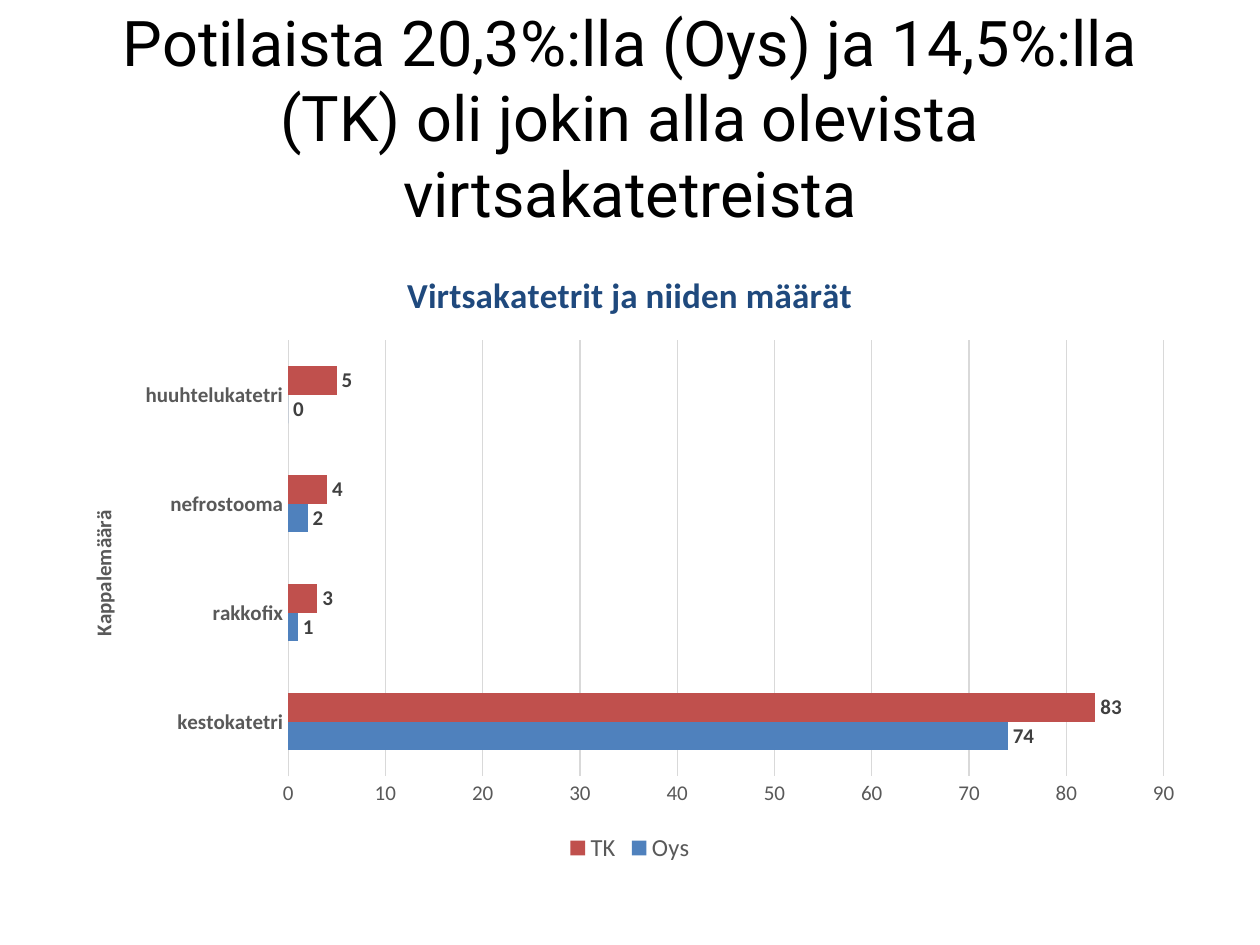
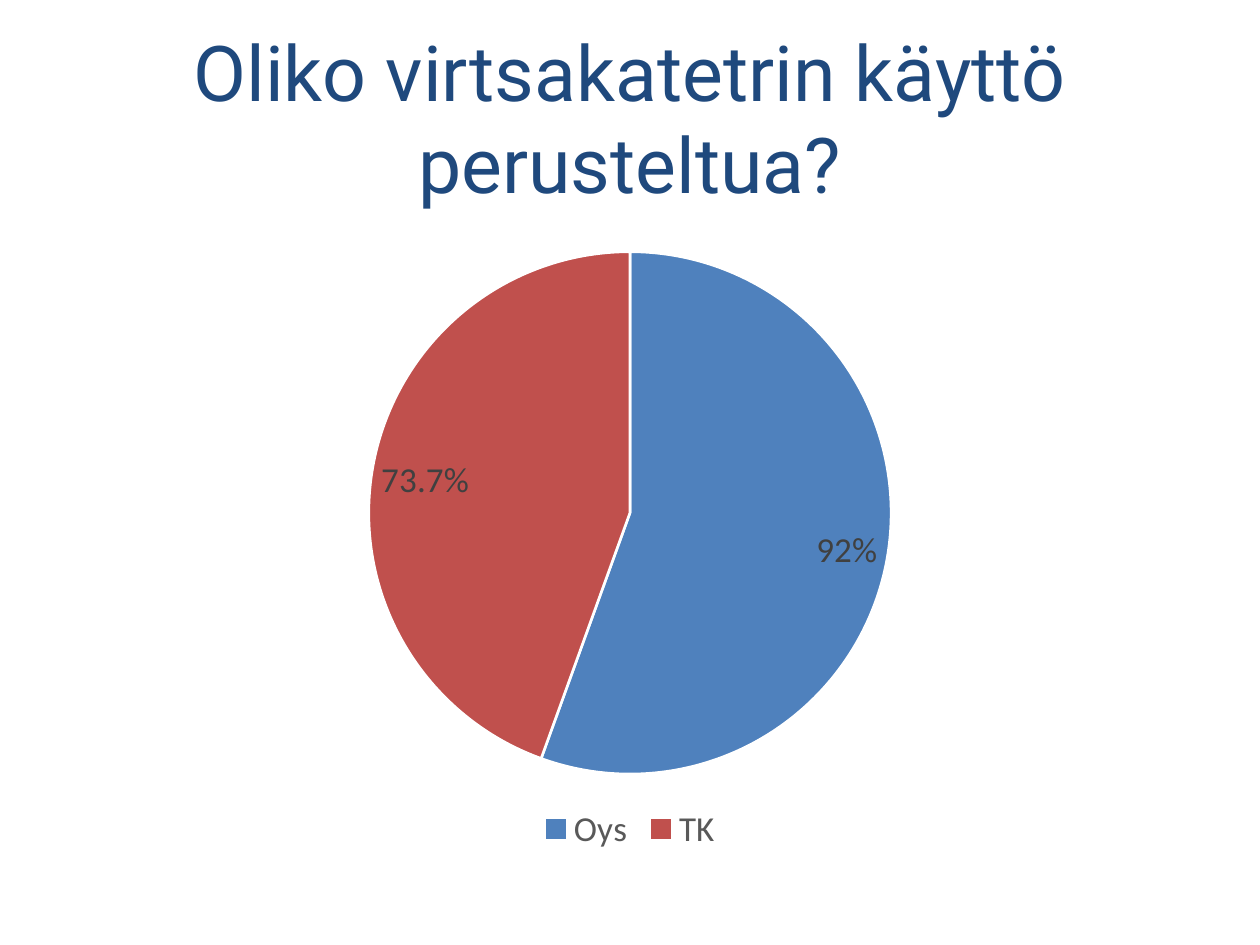
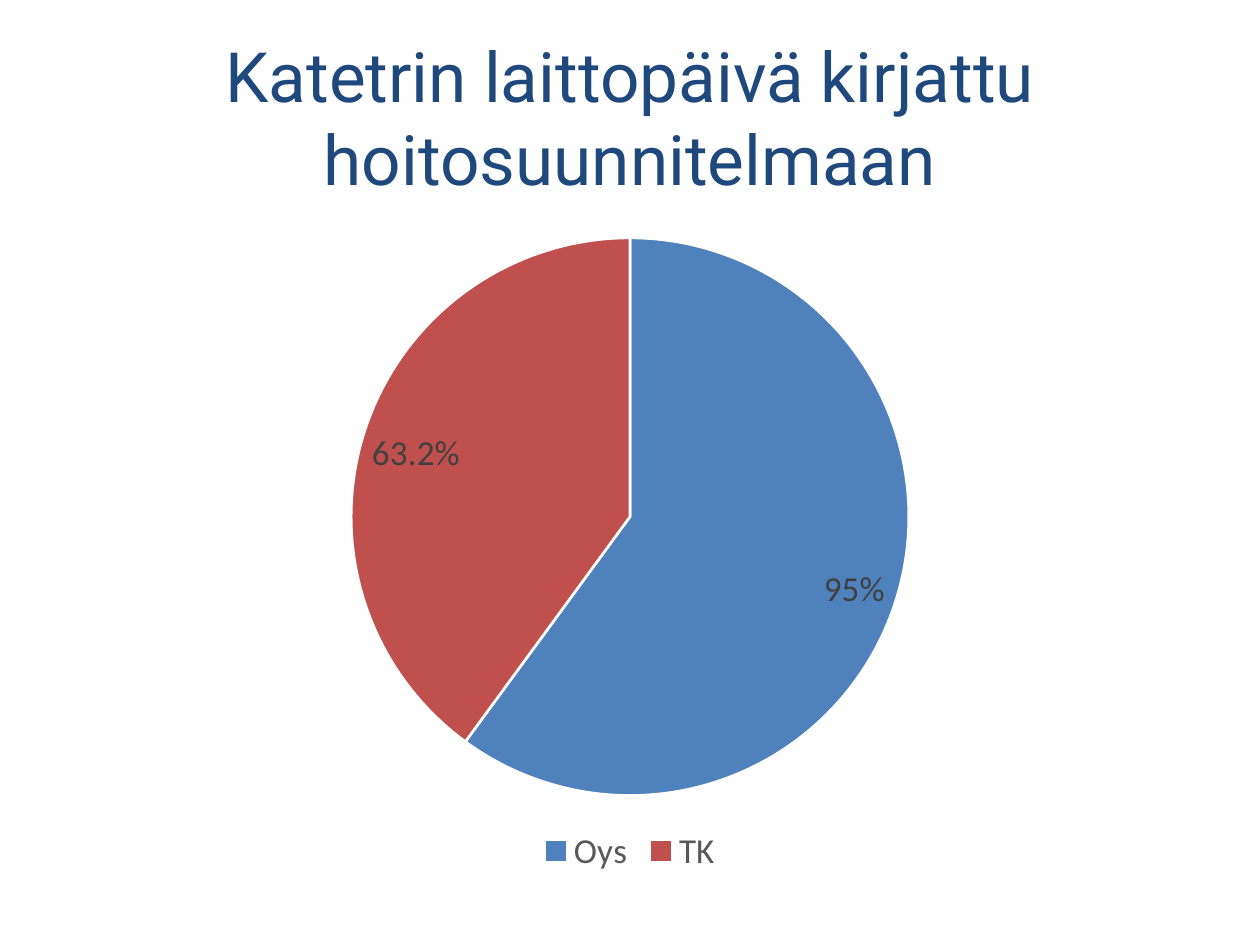
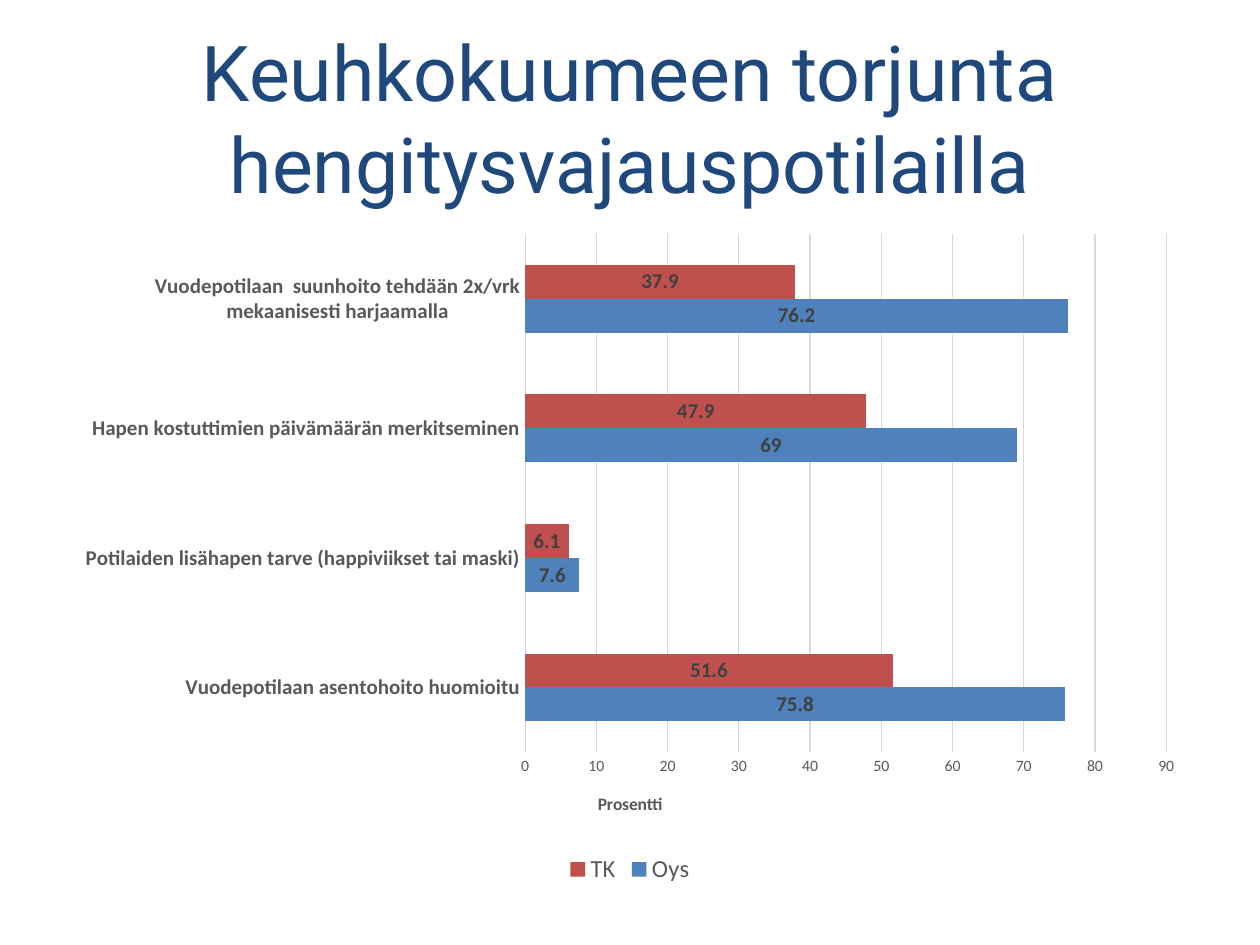
"""Build four slides of catheter and pneumonia survey charts."""
from dataclasses import dataclass

from pptx import Presentation
from pptx.chart.axis import CategoryAxis, ValueAxis
from pptx.chart.chart import Chart
from pptx.chart.data import CategoryChartData
from pptx.dml.color import RGBColor
from pptx.enum.chart import (XL_CHART_TYPE, XL_LABEL_POSITION,
                             XL_LEGEND_POSITION, XL_TICK_MARK)
from pptx.enum.text import MSO_ANCHOR, MSO_AUTO_SIZE, PP_ALIGN
from pptx.slide import Slide
from pptx.text.text import Font
from pptx.util import Inches, Pt

BAR, PIE = XL_CHART_TYPE.BAR_CLUSTERED, XL_CHART_TYPE.PIE
OUTSIDE_END = XL_LABEL_POSITION.OUTSIDE_END
CENTER = XL_LABEL_POSITION.CENTER
BEST_FIT = XL_LABEL_POSITION.BEST_FIT
LEGEND_BOTTOM = XL_LEGEND_POSITION.BOTTOM
NO_TICK = XL_TICK_MARK.NONE
ALIGN_CENTER = PP_ALIGN.CENTER
ANCHOR_MIDDLE = MSO_ANCHOR.MIDDLE
NO_AUTOFIT = MSO_AUTO_SIZE.NONE

BLACK = RGBColor(0x00, 0x00, 0x00)
WHITE = RGBColor(0xFF, 0xFF, 0xFF)
NAVY = RGBColor(0x1F, 0x49, 0x7D)
BLUE = RGBColor(0x4F, 0x81, 0xBD)
RED = RGBColor(0xC0, 0x50, 0x4D)
GRID_GRAY = RGBColor(0xD9, 0xD9, 0xD9)
TEXT_GRAY = RGBColor(0x59, 0x59, 0x59)
LABEL_GRAY = RGBColor(0x40, 0x40, 0x40)

TITLE_FONT = "Roboto"
CHART_FONT = "Calibri"
LEFT, WIDTH = Inches(0.5), Inches(9)
TITLE_TOP, TITLE_HEIGHT = Inches(0.3), Inches(1.25)
HOSPITALS = ("Oys", "TK")
HOSPITAL_COLORS = (BLUE, RED)
UPWARD = "-5400000"


@dataclass(frozen=True)
class SlideTitle:
    """Wording and look of a slide title."""
    text: str
    size: float = 44
    color: RGBColor = NAVY


@dataclass(frozen=True)
class BarSlide:
    """A slide with a bar chart comparing the hospitals."""
    title: SlideTitle
    top: float
    height: float
    categories: tuple[str, ...]
    values: tuple[tuple[float, ...], ...]
    label_position: XL_LABEL_POSITION
    value_size: float
    chart_title: str = ""
    category_title: str = ""
    value_title: str = ""


@dataclass(frozen=True)
class PieSlide:
    """A slide with a pie chart of one percentage per hospital."""
    title: SlideTitle
    top: float
    height: float
    percentages: tuple[float, ...]


SLIDES = (
    BarSlide(
        SlideTitle("Potilaista 20,3%:lla (Oys) ja 14,5%:lla (TK) oli jokin "
                   "alla olevista virtsakatetreista", 36, BLACK),
        1.94, 4.95,
        ("kestokatetri", "rakkofix", "nefrostooma", "huuhtelukatetri"),
        ((74, 1, 2, 0), (83, 3, 4, 5)),
        OUTSIDE_END, 12,
        chart_title="Virtsakatetrit ja niiden määrät",
        category_title="Kappalemäärä"),
    PieSlide(SlideTitle("Oliko virtsakatetrin käyttö perusteltua?"),
             1.86, 4.95, (92, 73.7)),
    PieSlide(SlideTitle("Katetrin laittopäivä kirjattu hoitosuunnitelmaan", 39.6),
             1.75, 5.23, (95, 63.2)),
    BarSlide(
        SlideTitle("Keuhkokuumeen torjunta hengitysvajauspotilailla"),
        1.75, 5.31,
        ("Vuodepotilaan asentohoito huomioitu",
         "Potilaiden lisähapen tarve (happiviikset tai maski)",
         "Hapen kostuttimien päivämäärän merkitseminen",
         "Vuodepotilaan  suunhoito tehdään 2x/vrk mekaanisesti harjaamalla"),
        ((75.8, 7.6, 69, 76.2), (51.6, 6.1, 47.9, 37.9)),
        CENTER, 9,
        value_title="Prosentti"),
)


def style_font(font: Font, size: float, color: RGBColor, bold: bool = False,
               name: str = CHART_FONT) -> None:
    """Set typeface, size, colour and weight."""
    font.name, font.size, font.bold = name, Pt(size), bold
    font.color.rgb = color


def set_title(slide: Slide, title: SlideTitle) -> None:
    """Place and format the title placeholder."""
    shape = slide.shapes.title
    shape.left, shape.top = LEFT, TITLE_TOP
    shape.width, shape.height = WIDTH, TITLE_HEIGHT
    frame = shape.text_frame
    frame.text = title.text
    frame.word_wrap = True
    frame.auto_size = NO_AUTOFIT
    frame.vertical_anchor = ANCHOR_MIDDLE
    paragraph = frame.paragraphs[0]
    paragraph.alignment = ALIGN_CENTER
    style_font(paragraph.font, title.size, title.color, name=TITLE_FONT)


def add_chart(slide: Slide, content: BarSlide | PieSlide, kind: XL_CHART_TYPE,
              data: CategoryChartData, legend_size: float) -> Chart:
    """Add a chart with the shared font and a legend below."""
    chart = slide.shapes.add_chart(kind, LEFT, Inches(content.top), WIDTH,
                                   Inches(content.height), data).chart
    style_font(chart.font, 10, BLACK)
    chart.has_title = False
    chart.has_legend = True
    chart.legend.position = LEGEND_BOTTOM
    chart.legend.include_in_layout = False
    style_font(chart.legend.font, legend_size, TEXT_GRAY)
    return chart


def style_axis(axis: CategoryAxis | ValueAxis, size: float, bold: bool,
               title: str, title_size: float, rotation: str) -> None:
    """Format tick labels and, where there is one, the axis title."""
    axis.major_tick_mark = axis.minor_tick_mark = NO_TICK
    style_font(axis.tick_labels.font, size, TEXT_GRAY, bold)
    axis.has_title = bool(title)
    if title:
        frame = axis.axis_title.text_frame
        frame.text = title
        frame._txBody.bodyPr.set("rot", rotation)
        style_font(frame.paragraphs[0].font, title_size, TEXT_GRAY, True)


def add_bar_chart(slide: Slide, content: BarSlide) -> None:
    """Draw one bar series per hospital."""
    data = CategoryChartData()
    data.categories = content.categories
    for hospital, values in zip(HOSPITALS, content.values):
        data.add_series(hospital, values)
    chart = add_chart(slide, content, BAR, data, 14)
    if content.chart_title:
        frame = chart.chart_title.text_frame
        frame.text = content.chart_title
        style_font(frame.paragraphs[0].font, 20, NAVY, True)
        chart.chart_title.include_in_layout = False

    category_axis, value_axis = chart.category_axis, chart.value_axis
    style_axis(category_axis, 12, True, content.category_title, 12, UPWARD)
    style_axis(value_axis, content.value_size, False, content.value_title, 10, "0")
    value_axis.minimum_scale, value_axis.maximum_scale = 0, 90
    value_axis.major_unit = 10
    value_axis.format.line.fill.background()
    value_axis.has_major_gridlines = True
    for line in (category_axis.format.line, value_axis.major_gridlines.format.line):
        line.color.rgb = GRID_GRAY
        line.width = Pt(0.75)

    plot = chart.plots[0]
    plot.gap_width, plot.overlap = 182, 0
    plot.vary_by_categories = False
    for series, color in zip(plot.series, HOSPITAL_COLORS):
        series.format.fill.solid()
        series.format.fill.fore_color.rgb = color
        labels = series.data_labels
        labels.show_value = True
        labels.position = content.label_position
        style_font(labels.font, 12, LABEL_GRAY, True)


def add_pie_chart(slide: Slide, content: PieSlide) -> None:
    """Draw one pie slice per hospital."""
    data = CategoryChartData()
    data.categories = HOSPITALS
    data.add_series("Series 1", content.percentages)
    chart = add_chart(slide, content, PIE, data, 20)
    plot = chart.plots[0]
    plot.vary_by_categories = True
    series = plot.series[0]
    labels = series.data_labels
    labels.show_value = True
    labels.position = BEST_FIT
    style_font(labels.font, 20, LABEL_GRAY)
    for index, (color, percentage) in enumerate(zip(HOSPITAL_COLORS, content.percentages)):
        point = series.points[index]
        point.format.fill.solid()
        point.format.fill.fore_color.rgb = color
        point.format.line.color.rgb = WHITE
        point.format.line.width = Pt(1.5)
        label = point.data_label
        label.text_frame.text = f"{percentage}%"
        label.position = BEST_FIT
        run = label.text_frame.paragraphs[0].runs[0]
        style_font(run.font, 20, LABEL_GRAY)


def main() -> None:
    """Build and save the presentation."""
    presentation = Presentation()
    presentation.slide_width, presentation.slide_height = Inches(10), Inches(7.5)
    title_only = presentation.slide_layouts.get_by_name("Title Only")
    for content in SLIDES:
        slide = presentation.slides.add_slide(title_only)
        set_title(slide, content.title)
        if isinstance(content, BarSlide):
            add_bar_chart(slide, content)
        else:
            add_pie_chart(slide, content)
    presentation.save("out.pptx")


if __name__ == "__main__":
    main()
